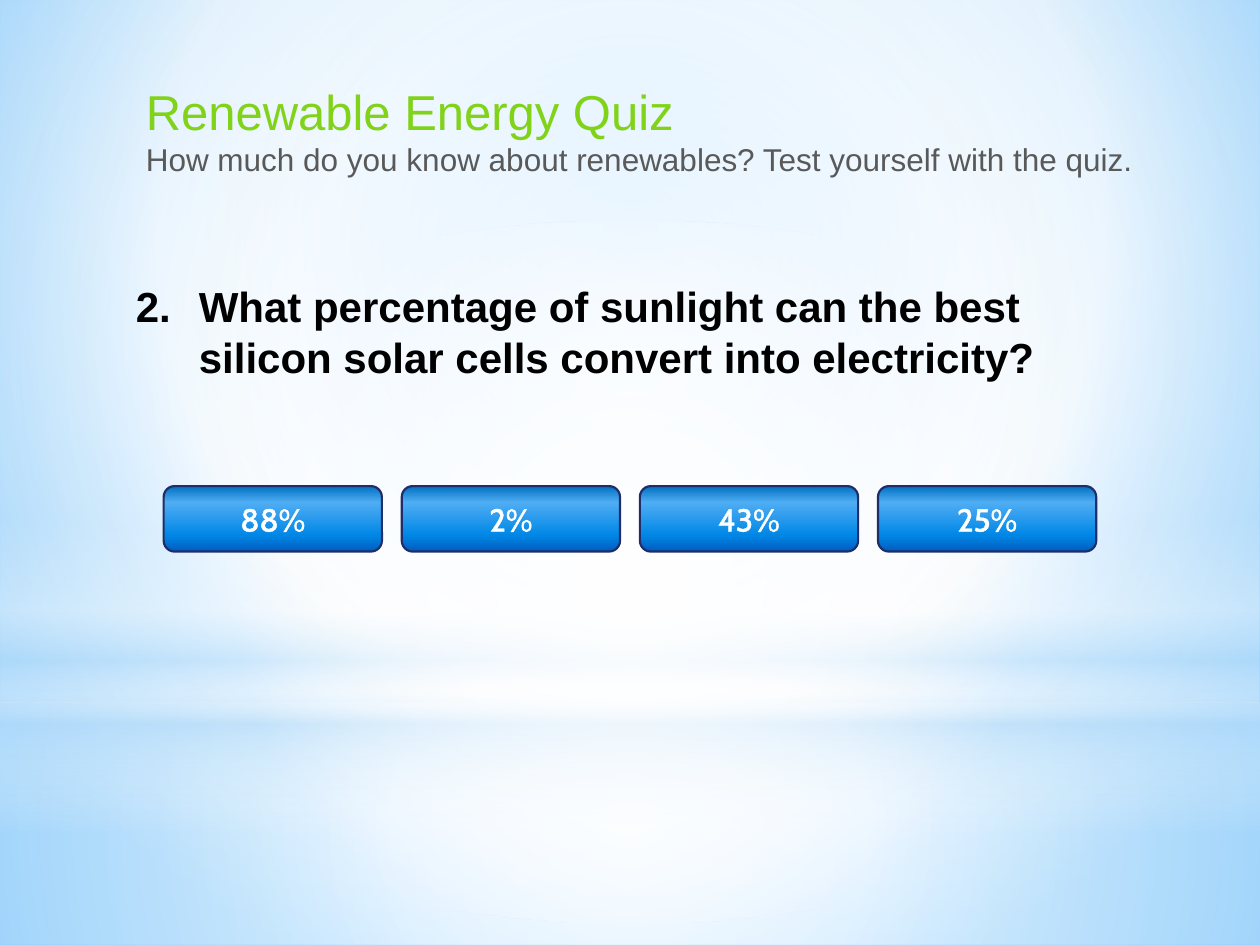
from lxml import etree
from pptx import Presentation
from pptx.dml.color import RGBColor
from pptx.enum.shapes import MSO_SHAPE
from pptx.enum.text import MSO_ANCHOR, PP_ALIGN
from pptx.oxml.ns import qn
from pptx.util import Cm, Pt

RECT, OVAL, ROUND = MSO_SHAPE.RECTANGLE, MSO_SHAPE.OVAL, MSO_SHAPE.ROUNDED_RECTANGLE
MIDDLE, CENTER = MSO_ANCHOR.MIDDLE, PP_ALIGN.CENTER

# Content
TITLE = "Renewable Energy Quiz"
INTRO = "How much do you know about renewables? Test yourself with the quiz."
QUERY = "What percentage of sunlight can the best silicon solar cells convert into electricity?"
NUMBER = 2
CHOICES = ["88%", "2%", "43%", "25%"]

COLORS = {
    "white": "FFFFFF", "black": "000000", "lime": "81D31A", "gray": "595959",
    "sky": "9ED5FF", "blue": "5BB9FF", "mist": "B4DCFA", "navy": "1F2E69",
    "rim": "0070C0", "shine": "4FADF3", "body": "0087E6", "base": "005CBF",
}

# Gradient stops: position %, color, opacity %; focus is left, top, right, bottom %
MIDST = (50, 50, 50, 50)
BACK = [(0, "sky", 100), (60, "white", 100), (100, "blue", 100)]
BUTTON = [(0, "rim", 100), (25, "shine", 100), (75, "body", 100), (100, "base", 100)]
LAYERS = [  # shape, left, top, width, height in cm, stops, focus
    (RECT, 0, 14.17, 25.4, 4.88,
     [(0, "white", 91), (37, "white", 76), (100, "mist", 79)], MIDST),
    (RECT, 0, 0, 25.4, 14.17,
     [(0, "white", 89), (48, "white", 62), (100, "mist", 79)], MIDST),
    (RECT, 0, 10.46, 25.4, 6.35,
     [(0, "white", 0), (29, "white", 30), (45, "mist", 40),
      (55, "white", 26), (65, "mist", 60), (100, "white", 0)], None),
    (OVAL, 0, 4.45, 25.4, 14.17, [(0, "white", 100), (56, "white", 0)], MIDST),
]

# Button row in cm
LEFT, TOP, WIDE, HIGH, STEP = 3.3, 9.8, 4.4, 1.32, 4.8


def add(parent, tag, **attrs):
    return etree.SubElement(parent, qn(tag), {k: str(v) for k, v in attrs.items()})


def blend(fill, holder, stops, focus=None):
    """Fill with a round gradient about focus, or a downward one without it."""
    fill.solid()
    old = holder.find(qn("a:solidFill"))
    grad = etree.Element(qn("a:gradFill"), rotWithShape="1")
    marks = add(grad, "a:gsLst")
    for pos, name, alpha in stops:
        mark = add(marks, "a:gs", pos=pos * 1000)
        color = add(mark, "a:srgbClr", val=COLORS[name])
        if alpha < 100:
            add(color, "a:alpha", val=alpha * 1000)
    if focus:
        way = add(grad, "a:path", path="circle")
        add(way, "a:fillToRect", **{k: v * 1000 for k, v in zip("ltrb", focus)})
    else:
        add(grad, "a:lin", ang=90 * 60000, scaled=0)
    holder.replace(old, grad)


def draw(slide, kind, box, stops, focus=None):
    shape = slide.shapes.add_shape(kind, *map(Cm, box))
    shape.shadow.inherit = False
    shape.line.fill.background()
    blend(shape.fill, shape.element.spPr, stops, focus)
    return shape


def style(para, size, color, font="Arial", bold=False):
    for run in para.runs:
        run.font.size, run.font.name, run.font.bold = Pt(size), font, bold
        run.font.color.rgb = RGBColor.from_string(COLORS[color])


def write(slide, box, text):
    frame = slide.shapes.add_textbox(*map(Cm, box)).text_frame
    frame.word_wrap = True
    frame.text = text
    return frame.paragraphs


def main():
    deck = Presentation()
    deck.slide_width, deck.slide_height = Cm(25.4), Cm(19.05)
    slide = deck.slides.add_slide(deck.slide_layouts[6])

    # Background and light layers
    fill = slide.background.fill
    fill.solid()
    holder = slide.element.find(".//" + qn("p:bgPr"))
    blend(fill, holder, BACK, (20, 10, 20, 60))
    for kind, *box, stops, focus in LAYERS:
        draw(slide, kind, box, stops, focus)

    # Numbered question
    para = write(slide, (2.49, 5.54, 21, 3.07), QUERY)[0]
    style(para, 24, "black", bold=True)
    props = para._p.get_or_add_pPr()
    props.set("marL", str(Cm(1.27)))
    props.set("indent", str(-Cm(1.27)))
    add(props, "a:buFont", typeface="+mj-lt")
    add(props, "a:buAutoNum", type="arabicPeriod", startAt=NUMBER)

    # Heading
    head, intro = write(slide, (2.69, 1.52, 21, 2.24), TITLE + "\n" + INTRO)
    style(head, 28, "lime")
    style(intro, 18, "gray")

    # Answer buttons
    for i, choice in enumerate(CHOICES):
        shape = draw(slide, ROUND, (LEFT + i * STEP, TOP, WIDE, HIGH), BUTTON)
        shape.line.color.rgb = RGBColor.from_string(COLORS["navy"])
        shape.line.width = Pt(1.25)
        frame = shape.text_frame
        frame.text = choice
        frame.vertical_anchor = MIDDLE
        para = frame.paragraphs[0]
        para.alignment = CENTER
        style(para, 18, "white", "Cabin")
        edge = etree.Element(qn("a:ln"), w=str(Pt(1.45)))
        add(add(edge, "a:solidFill"), "a:srgbClr", val=COLORS["white"])
        para.runs[0]._r.get_or_add_rPr().insert(0, edge)

    deck.save("out.pptx")


if __name__ == "__main__":
    main()
